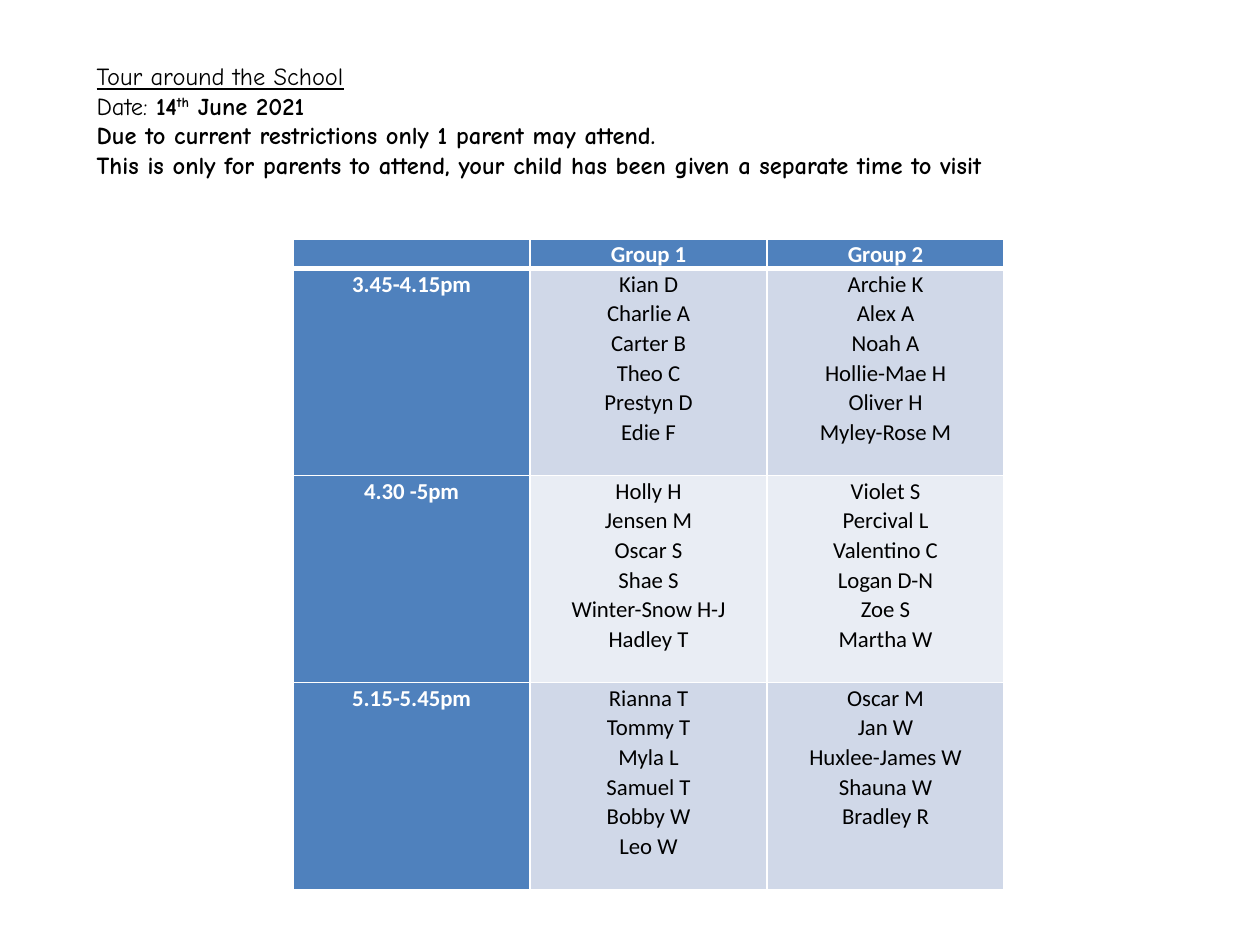
from lxml import etree
from pptx import Presentation
from pptx.dml.color import RGBColor
from pptx.enum.text import MSO_ANCHOR, MSO_AUTO_SIZE, PP_ALIGN
from pptx.oxml.ns import qn
from pptx.util import Emu, Pt

LEFT, MID = PP_ALIGN.LEFT, PP_ALIGN.CENTER
TOP, FIXED = MSO_ANCHOR.TOP, MSO_AUTO_SIZE.NONE
WHITE = RGBColor(0xFF, 0xFF, 0xFF)
BLACK = RGBColor(0x00, 0x00, 0x00)
BLUE = RGBColor(0x4F, 0x81, 0xBD)
BANDS = [RGBColor(0xD0, 0xD8, 0xE8), RGBColor(0xE9, 0xED, 0xF4)]

NOTICE = [
    [("Tour around the School", {"line": True})],
    [("Date: ", {}), ("14", {"bold": True}),
     ("th", {"bold": True, "lift": 30}), (" June 2021", {"bold": True})],
    [("Due to current restrictions only 1 parent may attend.", {"bold": True})],
    [("This is only for parents to attend, your child has been given "
      "a separate time to visit", {"bold": True})],
]
HEADS = ["", "Group 1", "Group 2"]
TOURS = [
    ("3.45-4.15pm",
     ["Kian D", "Charlie A", "Carter B", "Theo C", "Prestyn D", "Edie F"],
     ["Archie K", "Alex A", "Noah A", "Hollie-Mae H", "Oliver H", "Myley-Rose M"]),
    ("4.30 -5pm",
     ["Holly H", "Jensen M", "Oscar S", "Shae S", "Winter-Snow H-J", "Hadley T"],
     ["Violet S", "Percival L", "Valentino C", "Logan D-N", "Zoe S", "Martha W"]),
    ("5.15-5.45pm",
     ["Rianna T", "Tommy T", "Myla L", "Samuel T", "Bobby W", "Leo W"],
     ["Oscar M", "Jan W", "Huxlee-James W", "Shauna W", "Bradley R"]),
]


def px(count):
    """Turn pixels into EMU."""
    return Emu(round(count * 914400 / 126))


def write(frame, lines, face, size, color=BLACK, align=LEFT, space=1.0, bold=False):
    """Fill a text frame with lines, each a string or a list of styled runs."""
    for row, line in enumerate(lines):
        para = frame.paragraphs[0] if row == 0 else frame.add_paragraph()
        para.alignment, para.line_spacing = align, space
        if not line:
            para._p.get_or_add_endParaRPr().set("sz", str(size * 100))
            continue
        for text, style in [(line, {})] if isinstance(line, str) else line:
            run = para.add_run()
            run.text = text
            font = run.font
            font.name, font.size = face, Pt(size)
            font.color.rgb = color
            font.bold = style.get("bold", bold)
            font.underline = style.get("line", False)
            if "lift" in style:
                run._r.get_or_add_rPr().set("baseline", str(style["lift"] * 1000))


def rule(cell, side, width):
    """Draw a white border on one side of a cell."""
    line = etree.SubElement(cell._tc.get_or_add_tcPr(), qn("a:ln" + side), w=str(Pt(width)))
    fill = etree.SubElement(line, qn("a:solidFill"))
    etree.SubElement(fill, qn("a:srgbClr"), val=str(WHITE))


def paint(cell, lines, fill, color, bold, base=1):
    """Format one table cell and write its lines."""
    for side, width in zip("LRTB", (1, 1, 1, base)):
        rule(cell, side, width)
    cell.fill.solid()
    cell.fill.fore_color.rgb = fill
    cell.margin_left = cell.margin_right = px(9)
    cell.margin_top = cell.margin_bottom = 0
    write(cell.text_frame, lines, "Calibri", 13, color, MID, 1.07, bold)


def notice(slide, x, y, w, h):
    """Place the heading and visit details in the title placeholder."""
    title = slide.shapes.title
    title.left, title.top, title.width, title.height = map(px, (x, y, w, h))
    frame = title.text_frame
    frame.word_wrap, frame.auto_size = True, FIXED
    frame.vertical_anchor = TOP
    write(frame, NOTICE, "Comic Neue", 14)


def rota(slide, x, y, w, h, head=29):
    """Place the table of tour times and groups."""
    rows, cols = len(TOURS) + 1, len(HEADS)
    table = slide.shapes.add_table(rows, cols, *map(px, (x, y, w, h))).table
    for col in table.columns:
        col.width = px(w // cols)
    for row in table.rows:
        row.height = px((h - head) // len(TOURS))
    table.rows[0].height = px(head)
    for col, text in enumerate(HEADS):
        paint(table.cell(0, col), [text], BLUE, WHITE, True, 3)
    for row, (time, *groups) in enumerate(TOURS, 1):
        paint(table.cell(row, 0), [time], BLUE, WHITE, True)
        for col, names in enumerate(groups, 1):
            paint(table.cell(row, col), names, BANDS[(row - 1) % 2], BLACK, False)


def main():
    """Build and save the slide."""
    deck = Presentation()
    deck.slide_width, deck.slide_height = px(1260), px(945)
    slide = deck.slides.add_slide(deck.slide_layouts[5])
    notice(slide, 84, 55, 1075, 170)
    rota(slide, 293, 239, 711, 650)
    deck.save("out.pptx")


if __name__ == "__main__":
    main()
